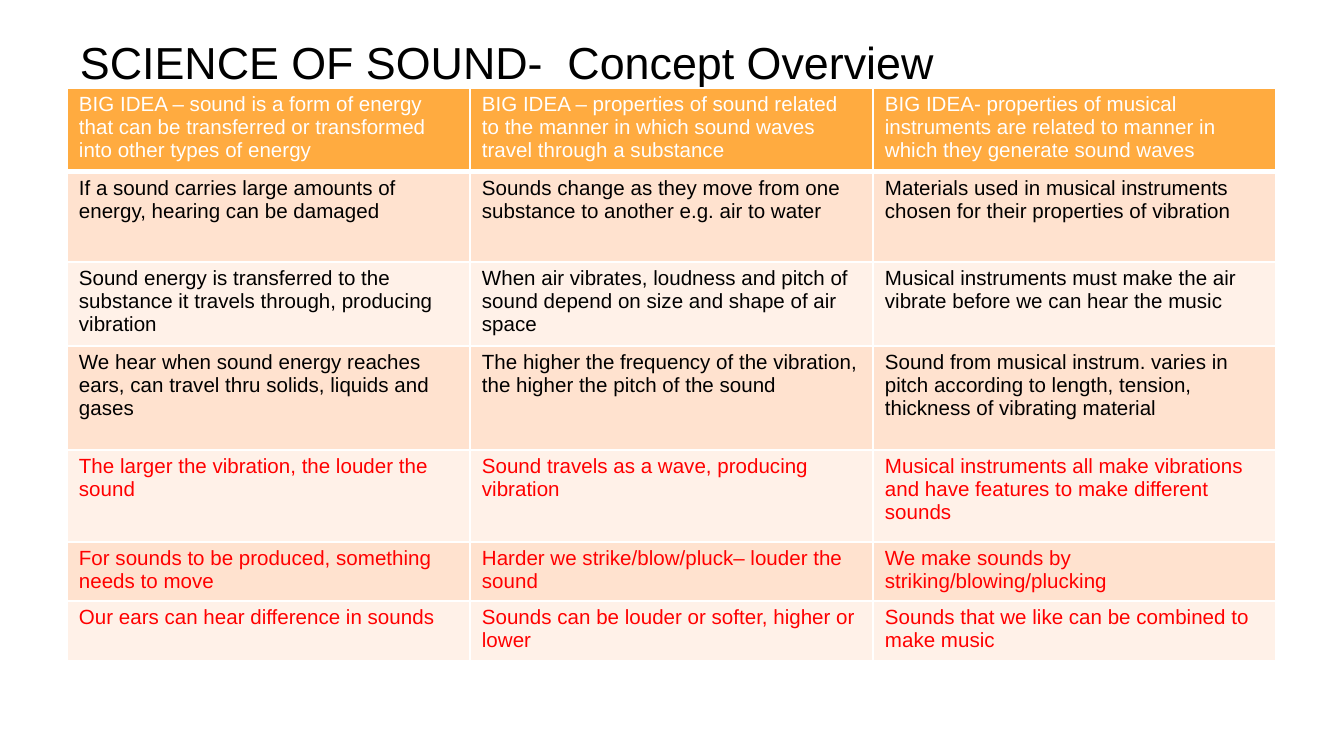
from lxml import etree
from pptx import Presentation
from pptx import util as u
from pptx.dml.color import RGBColor
from pptx.enum import text
from pptx.oxml import ns

EMU_PER_PX = 914400 / 134.4
FONT = "Arial"
WHITE = RGBColor(0xFF, 0xFF, 0xFF)
BLACK = RGBColor(0x00, 0x00, 0x00)
RED = RGBColor(0xFF, 0x00, 0x00)
ORANGE = RGBColor(0xFF, 0xAB, 0x40)
PEACH = RGBColor(0xFF, 0xE2, 0xCF)
PALE_PEACH = RGBColor(0xFF, 0xF1, 0xE8)

COLUMN_WIDTH = 403
FIRST_RED_ROW = 4

# Row height in px, then the text of the three columns.
CONCEPTS = [
    (78, "BIG IDEA – sound is a form of energy that can be transferred or transformed into other types of energy",
     "BIG IDEA – properties of sound related to the manner in which sound waves travel through a substance",
     "BIG IDEA- properties of musical instruments are related to manner in which they generate sound waves"),
    (90, "If a sound carries large amounts of energy, hearing can be damaged",
     "Sounds change as they move from one substance to another e.g. air to water",
     "Materials used in musical instruments chosen for their properties of vibration"),
    (81, "Sound energy is transferred to the substance it travels through, producing vibration",
     "When air vibrates, loudness and pitch of sound depend on size and shape of air space",
     "Musical instruments must make the air vibrate before we can hear the music"),
    (104, "We hear when sound energy reaches ears, can travel thru solids, liquids and gases",
     "The higher the frequency of the vibration, the higher the pitch of the sound",
     "Sound from musical instrum. varies in pitch according to length, tension, thickness of vibrating material"),
    (92, "The larger the vibration, the louder the sound",
     "Sound travels as a wave, producing vibration",
     "Musical instruments all make vibrations and have features to make different sounds"),
    (57, "For sounds to be produced, something needs to move",
     "Harder we strike/blow/pluck– louder the sound",
     "We make sounds by striking/blowing/plucking"),
    (57, "Our ears can hear difference in sounds",
     "Sounds can be louder or softer, higher or lower",
     "Sounds that we like can be combined to make music"),
]


def px(n):
    return u.Emu(round(n * EMU_PER_PX))


def write(tf, content, size, color):
    tf.word_wrap = True
    p = tf.paragraphs[0]
    p.alignment = text.PP_ALIGN.LEFT
    r = p.add_run()
    r.text = content
    r.font.name = FONT
    r.font.size = u.Pt(size)
    r.font.color.rgb = color


def set_margins(frame, side, top, bottom):
    frame.margin_left = frame.margin_right = px(side)
    frame.margin_top, frame.margin_bottom = px(top), px(bottom)


def set_borders(cell, color, bottom_width):
    """Draw 1 pt borders, with a width of its own for the bottom one."""
    props = cell._tc.get_or_add_tcPr()
    widths = {"a:lnL": 1, "a:lnR": 1, "a:lnT": 1, "a:lnB": bottom_width}
    for i, (tag, width) in enumerate(widths.items()):
        line = etree.Element(ns.qn(tag), w=str(u.Pt(width)))
        fill = etree.SubElement(line, ns.qn("a:solidFill"))
        etree.SubElement(fill, ns.qn("a:srgbClr"), val=str(color))
        props.insert(i, line)


def add_title(s, content):
    sp = s.shapes.add_textbox(px(67), px(17), px(1210), px(66))
    tf = sp.text_frame
    tf.vertical_anchor = text.MSO_ANCHOR.TOP
    set_margins(tf, side=13, top=18, bottom=0)
    write(tf, content, size=24, color=BLACK)


def row_colors(row):
    """Return the fill and text colours of a table row."""
    if row == 0:
        return ORANGE, WHITE
    return (PEACH if row % 2 else PALE_PEACH,
            RED if row >= FIRST_RED_ROW else BLACK)


def add_concept_table(s):
    columns = len(CONCEPTS[0]) - 1
    height = sum(concept[0] for concept in CONCEPTS)
    table = s.shapes.add_table(len(CONCEPTS), columns, px(67), px(88),
                               px(columns * COLUMN_WIDTH), px(height)).table
    for column in table.columns:
        column.width = px(COLUMN_WIDTH)
    for row, (row_height, *ideas) in enumerate(CONCEPTS):
        table.rows[row].height = px(row_height)
        fill, color = row_colors(row)
        for col, idea in enumerate(ideas):
            cell = table.cell(row, col)
            cell.fill.solid()
            cell.fill.fore_color.rgb = fill
            set_margins(cell, side=12, top=5, bottom=5)
            set_borders(cell, WHITE, bottom_width=1 if row else 3)
            write(cell.text_frame, idea, size=11, color=color)


def main():
    prs = Presentation()
    prs.slide_width, prs.slide_height = px(1344), px(756)
    s = prs.slides.add_slide(prs.slide_layouts[6])
    add_title(s, "SCIENCE OF SOUND-  Concept Overview")
    add_concept_table(s)
    prs.save("out.pptx")


if __name__ == "__main__":
    main()
